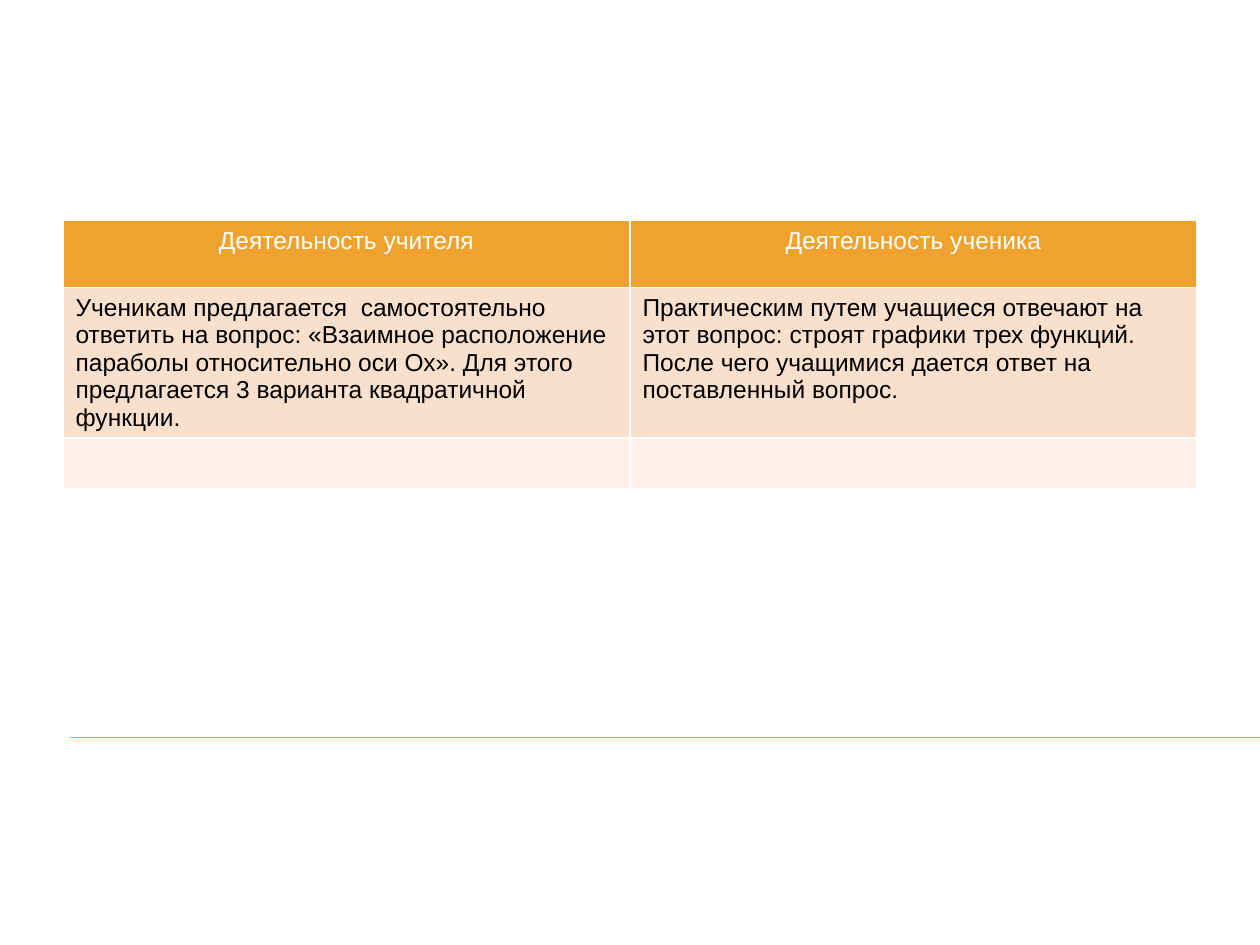
import dataclasses

import pptx
import pptx.dml.color
import pptx.enum.shapes
import pptx.enum.text
import pptx.oxml.ns
import pptx.util
from lxml import etree

Cm = pptx.util.Cm
Pt = pptx.util.Pt
qn = pptx.oxml.ns.qn


@dataclasses.dataclass(frozen=True)
class Theme:
    """Colours, font and sizes of the slide."""
    accent: str = "F0A22E"
    band: str = "F9E0CD"
    pale: str = "FCF0E8"
    white: str = "FFFFFF"
    black: str = "000000"
    font: str = "Arial"
    size: int = 14
    border: float = 1
    rule: float = 0.75


THEME = Theme()

HEADS = ("Деятельность учителя", "Деятельность ученика")
TASKS = (
    "Ученикам предлагается  самостоятельно ответить на вопрос: "
    "«Взаимное расположение параболы относительно оси Ох». "
    "Для этого предлагается 3 варианта квадратичной функции.",
    "Практическим путем учащиеся отвечают на этот вопрос: "
    "строят графики трех функций. "
    "После чего учащимися дается ответ на поставленный вопрос.",
)


def tint(code):
    """Return a colour from its hex code."""
    return pptx.dml.color.RGBColor.from_string(code)


def write(frame, text, color=THEME.black, size=THEME.size, align=None):
    """Put formatted text into a frame."""
    para = frame.paragraphs[0]
    para.alignment = align
    para.font.size = Pt(size)
    if text:
        run = para.add_run()
        run.text = text
        run.font.name = THEME.font
        run.font.size = Pt(size)
        run.font.color.rgb = tint(color)


def edge(cell):
    """Draw all four borders of a cell."""
    props = cell._tc.get_or_add_tcPr()
    for side in ("lnL", "lnR", "lnT", "lnB"):
        line = etree.SubElement(props, qn(f"a:{side}"), w=str(Pt(THEME.border)))
        fill = etree.SubElement(line, qn("a:solidFill"))
        etree.SubElement(fill, qn("a:srgbClr"), val=THEME.white)


def rule(slide, left, right, top):
    """Draw a thin level line."""
    kind = pptx.enum.shapes.MSO_CONNECTOR.STRAIGHT
    line = slide.shapes.add_connector(kind, left, top, right, top)
    line.line.color.rgb = tint(THEME.accent)
    line.line.width = Pt(THEME.rule)
    etree.SubElement(line._element.spPr, qn("a:effectLst"))


def grid(slide, rows, left, top, width):
    """Build a table from rows of height, fill, text format and texts."""
    count = len(rows[0][3])
    height = sum(row[0] for row in rows)
    table = slide.shapes.add_table(
        len(rows), count, left, top, width, height).table
    for row, (tall, fill, style, texts) in zip(table.rows, rows):
        row.height = tall
        for cell, text in zip(row.cells, texts):
            edge(cell)
            cell.fill.solid()
            cell.fill.fore_color.rgb = tint(fill)
            write(cell.text_frame, text, **style)


def main():
    """Build and save the slide."""
    deck = pptx.Presentation()
    deck.slide_width, deck.slide_height = Cm(25.4), Cm(19.05)
    slide = deck.slides.add_slide(deck.slide_layouts[6])
    rule(slide, Cm(1.42), deck.slide_width, Cm(14.86))
    head = {"color": THEME.white, "align": pptx.enum.text.PP_ALIGN.CENTER}
    rows = (
        (Cm(1.35), THEME.accent, head, HEADS),
        (Cm(3.03), THEME.band, {}, TASKS),
        (Cm(1.03), THEME.pale, {}, ("", "")),
    )
    grid(slide, rows, Cm(1.27), Cm(4.45), Cm(22.86))
    deck.save("out.pptx")


if __name__ == "__main__":
    main()
